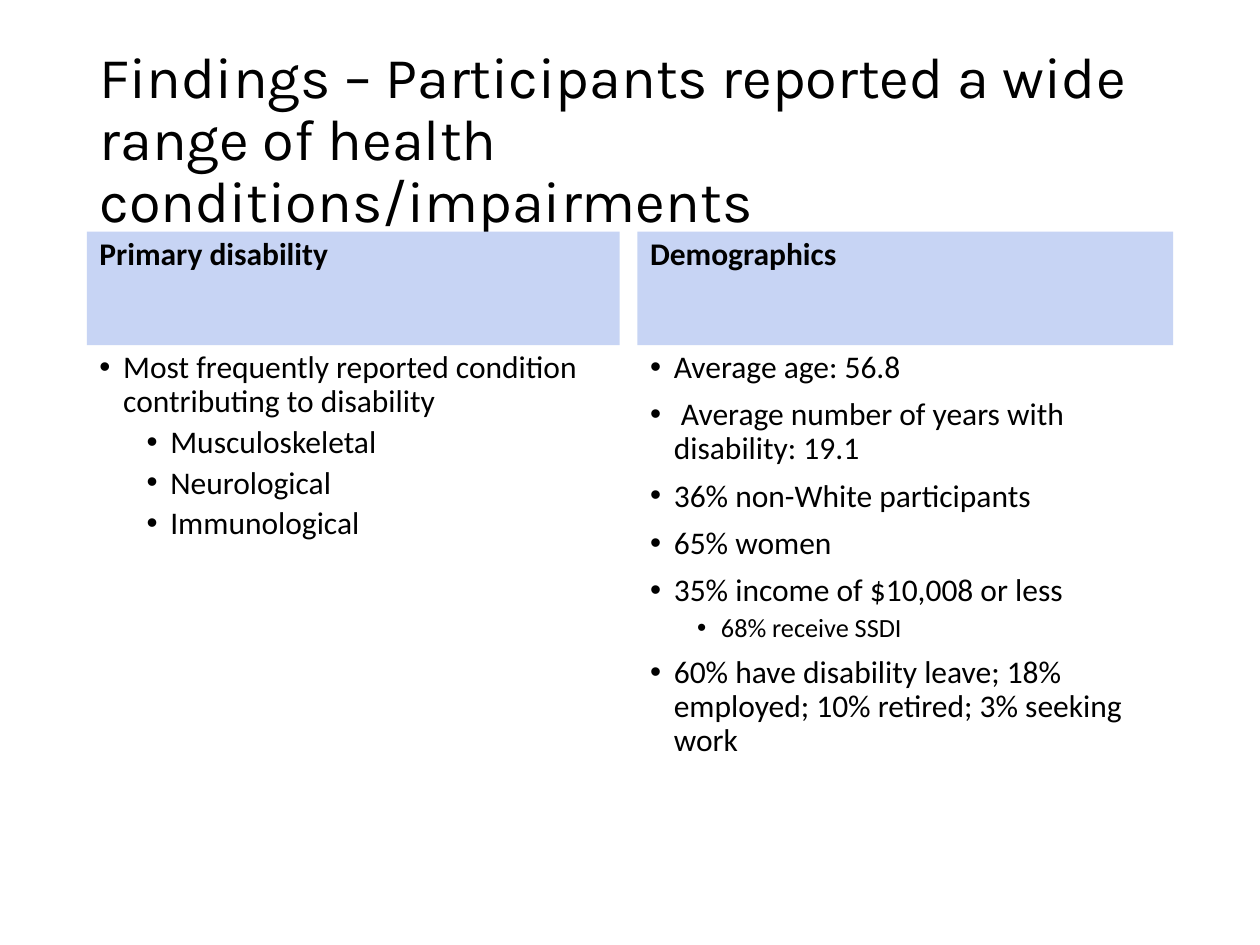
"""Builds a comparison slide on participants' disabilities and demographics."""
from lxml import etree
from pptx import Presentation
from pptx import util as u
from pptx.dml.color import RGBColor
from pptx.enum import text
from pptx.oxml.ns import qn

TITLE = "Findings – Participants reported a wide range of health conditions/impairments"
COLUMNS = [
    {"left": 1.75, "width": 10.74, "heading": "Primary disability", "items": [
        (0, 18, "Most frequently reported condition contributing to disability"),
        (1, 18, "Musculoskeletal"),
        (1, 18, "Neurological"),
        (1, 18, "Immunological"),
    ]},
    {"left": 12.85, "width": 10.8, "heading": "Demographics", "items": [
        (0, 18, "Average age: 56.8"),
        (0, 18, " Average number of years with disability: 19.1"),
        (0, 18, "36% non-White participants"),
        (0, 18, "65% women"),
        (0, 18, "35% income of $10,008 or less"),
        (1, 15, "68% receive SSDI"),
        (0, 18, "60% have disability leave; 18% employed; 10% retired; 3% seeking work"),
    ]},
]
HEADING_TOP, HEADING_HEIGHT, LIST_HEIGHT = 4.67, 2.29, 10.24
HANGING, LEVEL_STEP = 0.48, 0.95
SPACE_BEFORE = {0: 7.5, 1: 3.8}


def paint(color_format, value):
    color_format.rgb = RGBColor.from_string(value)


def place(box, left, top, width, height, anchor=text.MSO_ANCHOR.TOP):
    box.left, box.top, box.width, box.height = map(u.Cm, (left, top, width, height))
    frame_format = {"word_wrap": True, "auto_size": text.MSO_AUTO_SIZE.NONE,
                    "vertical_anchor": anchor}
    for name, value in frame_format.items():
        setattr(box.text_frame, name, value)


def write(para, words, size, face="Calibri", bold=False, space=0):
    para_format = {"alignment": text.PP_ALIGN.LEFT, "line_spacing": 0.9,
                   "space_before": u.Pt(space)}
    for name, value in para_format.items():
        setattr(para, name, value)
    span = para.add_run()
    span.text = words
    for name, value in {"name": face, "size": u.Pt(size), "bold": bold}.items():
        setattr(span.font, name, value)
    paint(span.font.color, "000000")


def add_bullet(para, level):
    para.level = level
    props = para._p.get_or_add_pPr()
    props.set("marL", str(u.Cm(HANGING + level * LEVEL_STEP)))
    props.set("indent", str(-u.Cm(HANGING)))
    etree.SubElement(props, qn("a:buFont")).set("typeface", "Arial")
    etree.SubElement(props, qn("a:buChar")).set("char", "•")


def fill_column(heading, body, column):
    left, width = column["left"], column["width"]
    place(heading, left, HEADING_TOP, width, HEADING_HEIGHT)
    heading.fill.solid()
    paint(heading.fill.fore_color, "C7D4F4")
    write(heading.text_frame.paragraphs[0], column["heading"], 18, bold=True)

    place(body, left, HEADING_TOP + HEADING_HEIGHT, width, LIST_HEIGHT)
    for index, (level, size, words) in enumerate(column["items"]):
        frame = body.text_frame
        para = frame.add_paragraph() if index else frame.paragraphs[0]
        add_bullet(para, level)
        write(para, words, size, space=SPACE_BEFORE[level] if index else 0)


def main():
    deck = Presentation()
    deck.slide_width, deck.slide_height = u.Cm(25.4), u.Cm(19.05)
    page = deck.slides.add_slide(deck.slide_layouts.get_by_name("Comparison"))
    title, *boxes = page.placeholders
    place(title, 1.75, 1.02, 21.89, 3.68, text.MSO_ANCHOR.MIDDLE)
    write(title.text_frame.paragraphs[0], TITLE, 33, "Karla")
    for heading, body, column in zip(boxes[::2], boxes[1::2], COLUMNS):
        fill_column(heading, body, column)
    deck.save("out.pptx")


if __name__ == "__main__":
    main()
